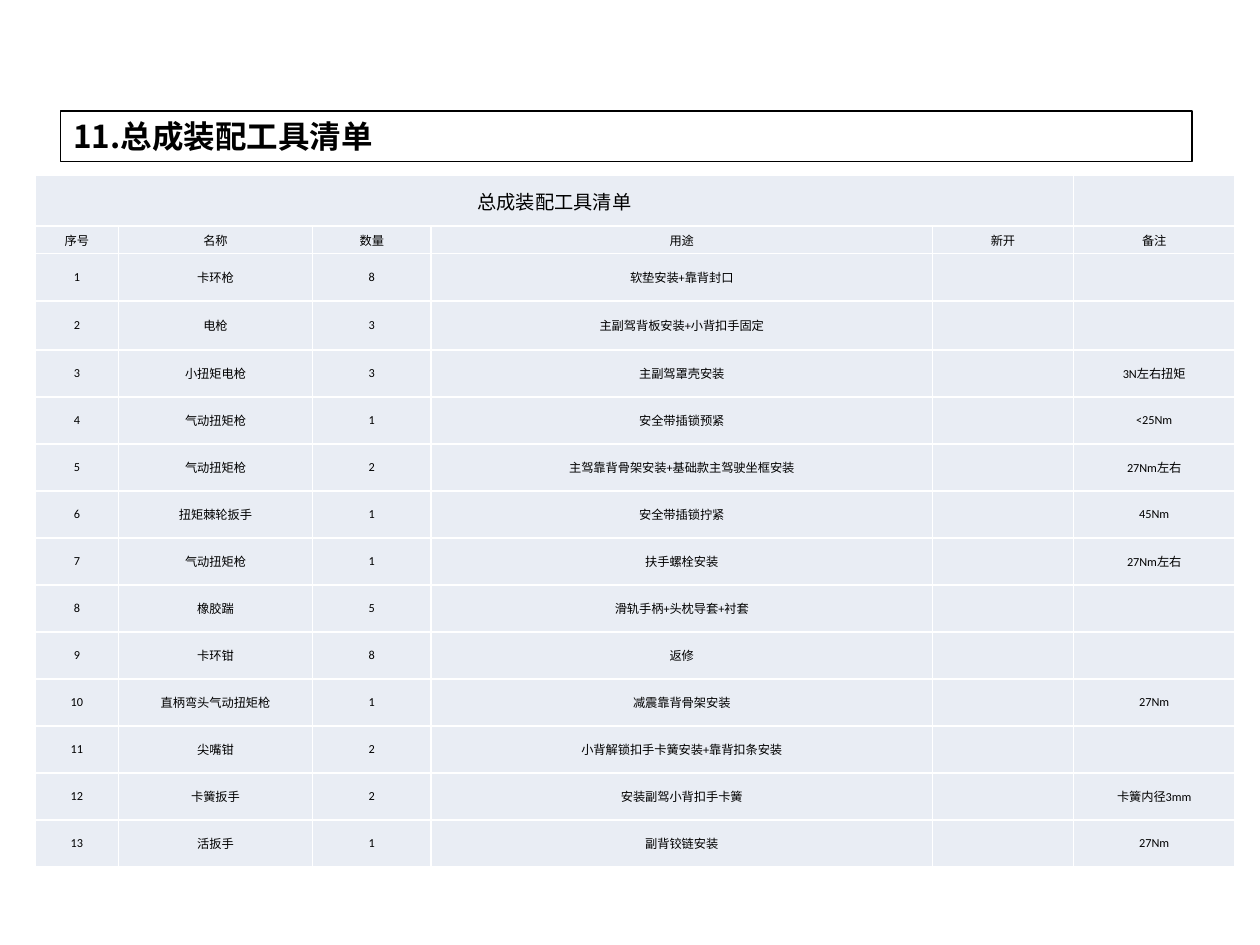
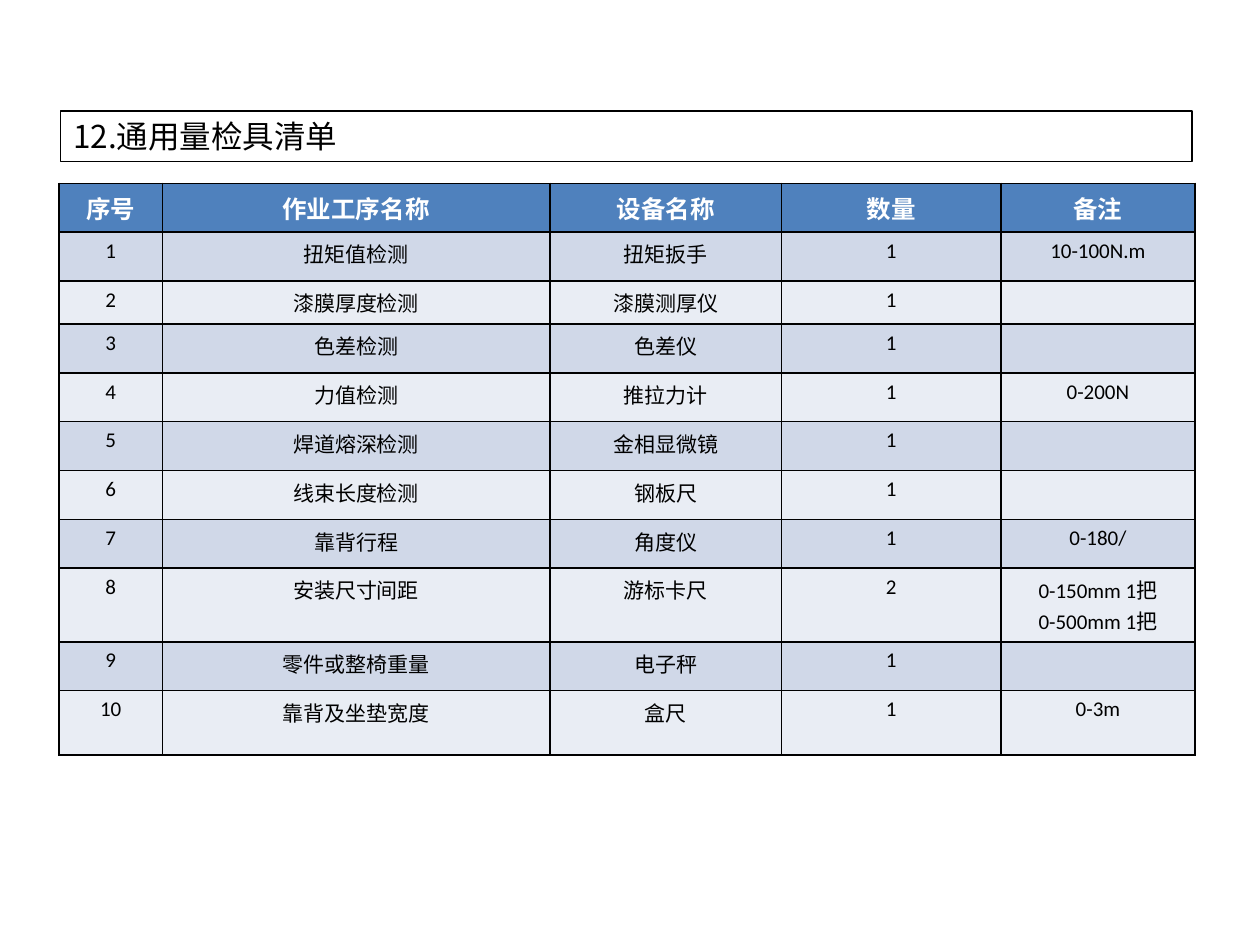
from lxml import etree
from pptx import Presentation
from pptx.dml.color import RGBColor
from pptx.enum import text
from pptx.oxml import ns
from pptx.util import Pt

# Shared style
BLACK, WHITE = "000000", "FFFFFF"
BLUE, BAND, PALE = "4F81BD", "D0D8E8", "E9EDF4"
LATIN, CJK = "Calibri", "Noto Sans CJK SC"
TITLE_BOX = (34.6, 63.4, 646.6, 28.8)


def rgb(color):
    return RGBColor.from_string(color)


def write(tf, content, size=12, color=BLACK, bold=False, font=LATIN,
          align=text.PP_ALIGN.CENTER):
    """Fill a text frame, one paragraph per line."""
    for i, line in enumerate(content.split("\n")):
        p = tf.paragraphs[0] if i == 0 else tf.add_paragraph()
        p.alignment = align
        if not line:
            # An empty cell keeps the text size, so its row does not grow
            end = etree.SubElement(p._p, ns.qn("a:endParaRPr"))
            end.set("sz", str(size * 100))
            continue
        r = p.add_run()
        r.text = line
        r.font.size, r.font.bold, r.font.name = Pt(size), bold, font
        r.font.color.rgb = rgb(color)
        ea = etree.SubElement(r._r.get_or_add_rPr(), ns.qn("a:ea"))
        ea.set("typeface", CJK)


def add_borders(cell, color, width=1):
    tc_pr = cell._tc.get_or_add_tcPr()
    for side in ("lnL", "lnR", "lnT", "lnB"):
        ln = etree.SubElement(tc_pr, ns.qn(f"a:{side}"), w=str(Pt(width)))
        fill = etree.SubElement(ln, ns.qn("a:solidFill"))
        etree.SubElement(fill, ns.qn("a:srgbClr"), val=color)


class Deck:
    def __init__(self):
        self.prs = Presentation()
        self.prs.slide_width, self.prs.slide_height = Pt(720), Pt(540)
        self.s = None

    def slide(self, title, bold=False):
        """Start a slide with a framed title."""
        self.s = self.prs.slides.add_slide(self.prs.slide_layouts[5])
        sp = self.s.shapes.title
        sp.left, sp.top, sp.width, sp.height = map(Pt, TITLE_BOX)
        sp.fill.solid()
        sp.fill.fore_color.rgb = rgb(WHITE)
        sp.line.color.rgb = rgb(BLACK)
        sp.line.width = Pt(0.75)
        tf = sp.text_frame
        tf.auto_size = text.MSO_AUTO_SIZE.NONE
        tf.vertical_anchor = text.MSO_ANCHOR.MIDDLE
        write(tf, title, size=18, bold=bold, font=CJK,
              align=text.PP_ALIGN.LEFT)

    def table(self, left, top, widths, heights, rows, style, border,
              margins=(7.2, 3.6), anchor=text.MSO_ANCHOR.TOP):
        """Draw rows; style(row number) gives the fill and text format."""
        frame = self.s.shapes.add_table(
            len(rows), len(widths), Pt(left), Pt(top),
            Pt(sum(widths)), Pt(sum(heights)))
        table = frame.table
        table.first_row = table.horz_banding = False
        for column, width in zip(table.columns, widths):
            column.width = Pt(width)
        for i, (row, height) in enumerate(zip(rows, heights)):
            table.rows[i].height = Pt(height)
            fill, fmt = style(i)
            for j, value in enumerate(row):
                cell = table.cell(i, j)
                cell.margin_left = cell.margin_right = Pt(margins[0])
                cell.margin_top = cell.margin_bottom = Pt(margins[1])
                cell.vertical_anchor = anchor
                add_borders(cell, border)
                cell.fill.solid()
                cell.fill.fore_color.rgb = rgb(fill)
                write(cell.text_frame, value, **fmt)
        return table


# Slide contents: name, quantity, use, remark
ASSEMBLY_TOOLS = [
    ("卡环枪", "8", "软垫安装+靠背封口", ""),
    ("电枪", "3", "主副驾背板安装+小背扣手固定", ""),
    ("小扭矩电枪", "3", "主副驾罩壳安装", "3N左右扭矩"),
    ("气动扭矩枪", "1", "安全带插锁预紧", "<25Nm"),
    ("气动扭矩枪", "2", "主驾靠背骨架安装+基础款主驾驶坐框安装", "27Nm左右"),
    ("扭矩棘轮扳手", "1", "安全带插锁拧紧", "45Nm"),
    ("气动扭矩枪", "1", "扶手螺栓安装", "27Nm左右"),
    ("橡胶踹", "5", "滑轨手柄+头枕导套+衬套", ""),
    ("卡环钳", "8", "返修", ""),
    ("直柄弯头气动扭矩枪", "1", "减震靠背骨架安装", "27Nm"),
    ("尖嘴钳", "2", "小背解锁扣手卡簧安装+靠背扣条安装", ""),
    ("卡簧扳手", "2", "安装副驾小背扣手卡簧", "卡簧内径3mm"),
    ("活扳手", "1", "副背铰链安装", "27Nm"),
]

# Operation, device, quantity, remark
GAUGES = [
    ("扭矩值检测", "扭矩扳手", "1", "10-100N.m"),
    ("漆膜厚度检测", "漆膜测厚仪", "1", ""),
    ("色差检测", "色差仪", "1", ""),
    ("力值检测", "推拉力计", "1", "0-200N"),
    ("焊道熔深检测", "金相显微镜", "1", ""),
    ("线束长度检测", "钢板尺", "1", ""),
    ("靠背行程", "角度仪", "1", "0-180/"),
    ("安装尺寸间距", "游标卡尺", "2", "0-150mm 1把\n0-500mm 1把"),
    ("零件或整椅重量", "电子秤", "1", ""),
    ("靠背及坐垫宽度", "盒尺", "1", "0-3m"),
]


def tool_style(row):
    return PALE, {"size": 11 if row == 0 else 7}


def gauge_style(row):
    if row == 0:
        return BLUE, {"size": 14, "color": WHITE, "bold": True}
    return (BAND if row % 2 else PALE), {"size": 12}


def main():
    deck = Deck()

    # Assembly tools, with a caption across the first five columns
    deck.slide("11.总成装配工具清单", bold=True)
    rows = [("总成装配工具清单", "", "", "", "", ""),
            ("序号", "名称", "数量", "用途", "新开", "备注")]
    rows += [(str(n), name, count, use, "", remark) for n, (name, count, use, remark)
             in enumerate(ASSEMBLY_TOOLS, 1)]
    table = deck.table(
        20.2, 100.4, [47.5, 110.9, 67.7, 286.6, 80.6, 92.2],
        [28.8, 15.8, 27, 28.1] + [26.85] * 11, rows, tool_style, WHITE,
        margins=(0, 0), anchor=text.MSO_ANCHOR.MIDDLE)
    table.cell(0, 0).merge(table.cell(0, 4))

    # Gauges
    deck.slide("12.通用量检具清单")
    rows = [("序号", "作业工序名称", "设备名称", "数量", "备注")]
    rows += [(str(n), *gauge) for n, gauge in enumerate(GAUGES, 1)]
    deck.table(
        33.8, 104.8, [59, 221.4, 132.5, 125.3, 110.9],
        [27.9] * 2 + [24.5] + [27.9] * 5 + [41.8, 27.9, 36.9],
        rows, gauge_style, BLACK)

    deck.prs.save("out.pptx")


if __name__ == "__main__":
    main()
